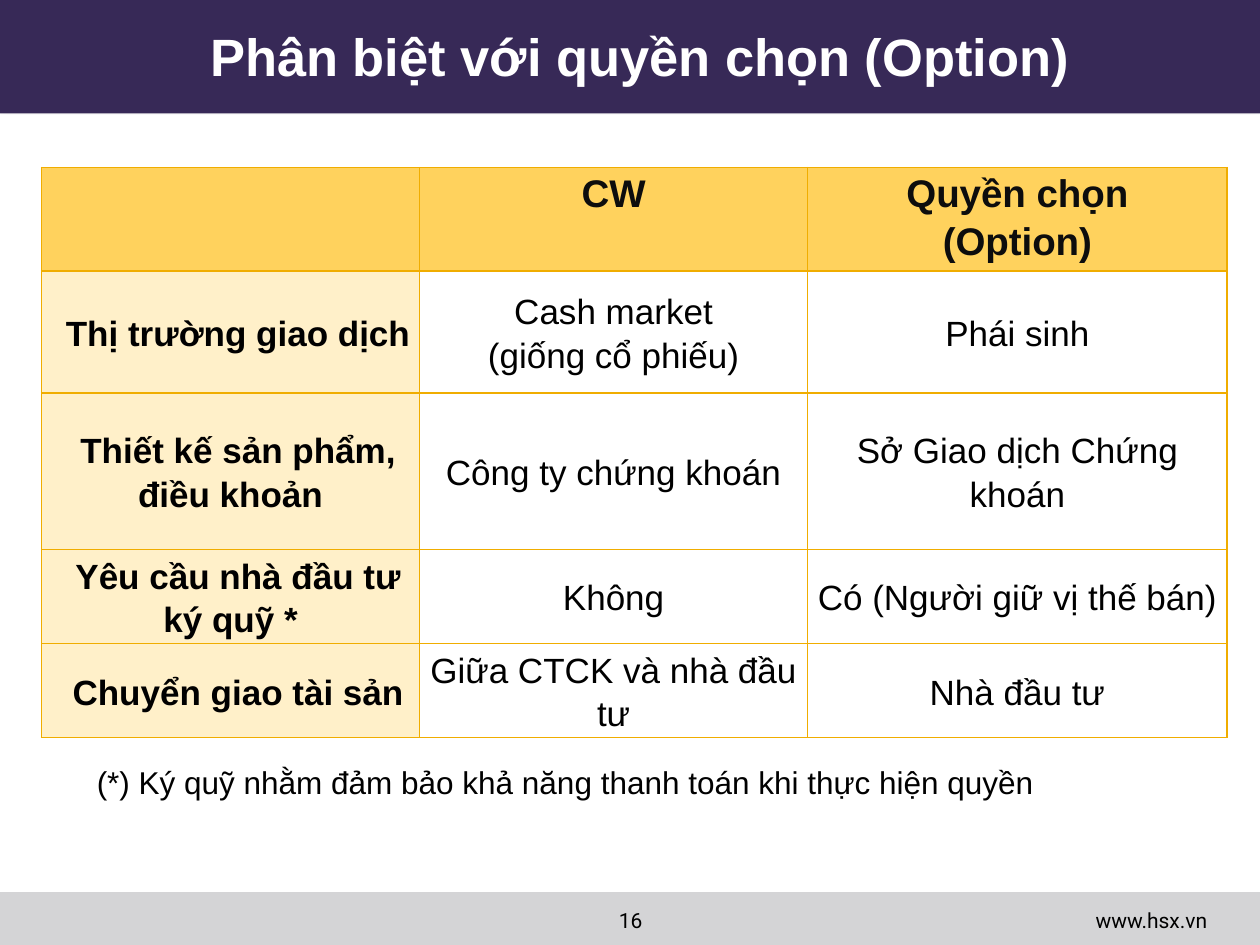
"""Build a slide that compares covered warrants with options."""
from dataclasses import dataclass
from typing import Optional

from lxml.etree import SubElement
from pptx import Presentation
from pptx.dml.color import RGBColor
from pptx.enum.shapes import MSO_SHAPE as Preset
from pptx.enum.text import MSO_ANCHOR as Anchor, MSO_AUTO_SIZE as AutoSize, PP_ALIGN as Align
from pptx.oxml import parse_xml
from pptx.oxml.ns import nsdecls, qn
from pptx.util import Inches, Pt

PURPLE = RGBColor(0x37, 0x29, 0x57)
GREY = RGBColor(0xD4, 0xD4, 0xD6)
WHITE = RGBColor(0xFF, 0xFF, 0xFF)
BLACK = RGBColor(0, 0, 0)
HEADER_INK = RGBColor(0x0D, 0x0D, 0x0D)
HEADER_GOLD = RGBColor(0xFF, 0xD2, 0x5D)
LABEL_CREAM = RGBColor(0xFF, 0xF0, 0xC9)
BORDER_GOLD = RGBColor(0xF0, 0xAD, 0x00)

COLUMN_WIDTHS = (3, 3.08, 3.33)


@dataclass(frozen=True)
class Box:
    left: float
    top: float
    width: float
    height: float

    def lengths(self) -> tuple:
        return tuple(Inches(v) for v in (self.left, self.top, self.width, self.height))


@dataclass(frozen=True)
class Comparison:
    label: str
    warrant: str
    option: str
    height: float


@dataclass(frozen=True)
class CellStyle:
    size: float = 20
    color: RGBColor = BLACK
    bold: bool = False
    fill: Optional[RGBColor] = None
    anchor: Anchor = Anchor.MIDDLE
    indent: float = 0


HEADER = CellStyle(22, HEADER_INK, True, HEADER_GOLD, Anchor.TOP)
LABEL = CellStyle(bold=True, fill=LABEL_CREAM, indent=0.12)
VALUE = CellStyle()

COMPARISONS = (
    Comparison("", "CW", "Quyền chọn\n(Option)", 0.47),
    Comparison("Thị trường giao dịch", "Cash market\n(giống cổ phiếu)", "Phái sinh", 0.97),
    Comparison("Thiết kế sản phẩm, điều khoản", "Công ty chứng khoán",
               "Sở Giao dịch Chứng khoán", 1.24),
    Comparison("Yêu cầu nhà đầu tư ký quỹ *", "Không", "Có (Người giữ vị thế bán)", 0.71),
    Comparison("Chuyển giao tài sản", "Giữa CTCK và nhà đầu tư", "Nhà đầu tư", 0.44),
)


def write_text(frame, text: str, *, size: float, font: str = "Arial", color: RGBColor = BLACK,
               bold: bool = False, align: Align = Align.LEFT,
               spacing: Optional[float] = None, indent: float = 0) -> None:
    frame.word_wrap = True
    frame.text = text
    for paragraph in frame.paragraphs:
        paragraph.alignment = align
        paragraph.line_spacing = spacing
        if indent:
            properties = paragraph._p.get_or_add_pPr()
            properties.set("marL", "0")
            properties.set("indent", str(Inches(indent)))
        for run in paragraph.runs:
            run.font.size = Pt(size)
            run.font.name = font
            run.font.bold = bold
            run.font.color.rgb = color


def add_band(slide, box: Box, color: RGBColor):
    band = slide.shapes.add_shape(Preset.RECTANGLE, *box.lengths())
    band.shadow.inherit = False
    band.fill.solid()
    band.fill.fore_color.rgb = color
    band.line.fill.background()
    slide.shapes.title.element.addprevious(band.element)
    return band


def add_upward_shadow(band) -> None:
    effects = band.element.spPr.find(qn("a:effectLst"))
    effects.append(parse_xml(
        f'<a:outerShdw {nsdecls("a")} blurRad="{Pt(4)}" dist="{Pt(3)}" dir="16200000" rotWithShape="0">'
        '<a:srgbClr val="000000"><a:alpha val="40000"/></a:srgbClr></a:outerShdw>'))


def add_note(slide, box: Box, text: str, **text_format) -> None:
    note = slide.shapes.add_textbox(*box.lengths())
    write_text(note.text_frame, text, **text_format)


def add_borders(cell) -> None:
    properties = cell._tc.get_or_add_tcPr()
    for side in ("a:lnL", "a:lnR", "a:lnT", "a:lnB"):
        line = SubElement(properties, qn(side), w=str(Pt(1)))
        SubElement(SubElement(line, qn("a:solidFill")), qn("a:srgbClr"), val=str(BORDER_GOLD))


def fill_cell(cell, text: str, style: CellStyle) -> None:
    add_borders(cell)
    if style.fill is None:
        cell.fill.background()
    else:
        cell.fill.solid()
        cell.fill.fore_color.rgb = style.fill
    cell.margin_left = cell.margin_right = Inches(0.07)
    cell.margin_top = cell.margin_bottom = 0
    cell.vertical_anchor = style.anchor
    write_text(cell.text_frame, text, size=style.size, color=style.color, bold=style.bold,
               align=Align.CENTER, spacing=1.12, indent=style.indent)


def add_comparison_table(slide, box: Box) -> None:
    table_frame = slide.shapes.add_table(len(COMPARISONS), len(COLUMN_WIDTHS), *box.lengths())
    table = table_frame.table
    table.first_row = table.horz_banding = False
    for column, width in zip(table.columns, COLUMN_WIDTHS):
        column.width = Inches(width)
    for index, (row, comparison) in enumerate(zip(table.rows, COMPARISONS)):
        row.height = Inches(comparison.height)
        styles = (LABEL, VALUE, VALUE) if index else (HEADER,) * 3
        texts = (comparison.label, comparison.warrant, comparison.option)
        for cell, text, style in zip(row.cells, texts, styles):
            fill_cell(cell, text, style)
    table_frame.height = Inches(box.height)


def main() -> None:
    deck = Presentation()
    deck.slide_width, deck.slide_height = Inches(10), Inches(7.5)
    slide = deck.slides.add_slide(deck.slide_layouts[5])

    add_upward_shadow(add_band(slide, Box(0, 0, 10, 0.9), PURPLE))
    add_band(slide, Box(0, 7.08, 10, 0.42), GREY)

    title = slide.shapes.title
    title.left, title.top, title.width, title.height = Box(0.58, 0.13, 9, 0.62).lengths()
    title.text_frame.auto_size = AutoSize.NONE
    title.text_frame.vertical_anchor = Anchor.MIDDLE
    write_text(title.text_frame, "Phân biệt với quyền chọn (Option)", size=30, color=WHITE,
               bold=True, align=Align.CENTER)

    add_note(slide, Box(4.17, 7.15, 1.67, 0.35), "16", size=12, font="Roboto", align=Align.CENTER)
    add_note(slide, Box(7.35, 7.15, 2.33, 0.34), "www.hsx.vn", size=12, font="Roboto",
             align=Align.RIGHT)
    add_comparison_table(slide, Box(0.33, 1.33, 9.42, 4.52))
    add_note(slide, Box(0.67, 6.01, 8.67, 0.4),
             "(*) Ký quỹ nhằm đảm bảo khả năng thanh toán khi thực hiện quyền", size=18)

    deck.save("out.pptx")


if __name__ == "__main__":
    main()
